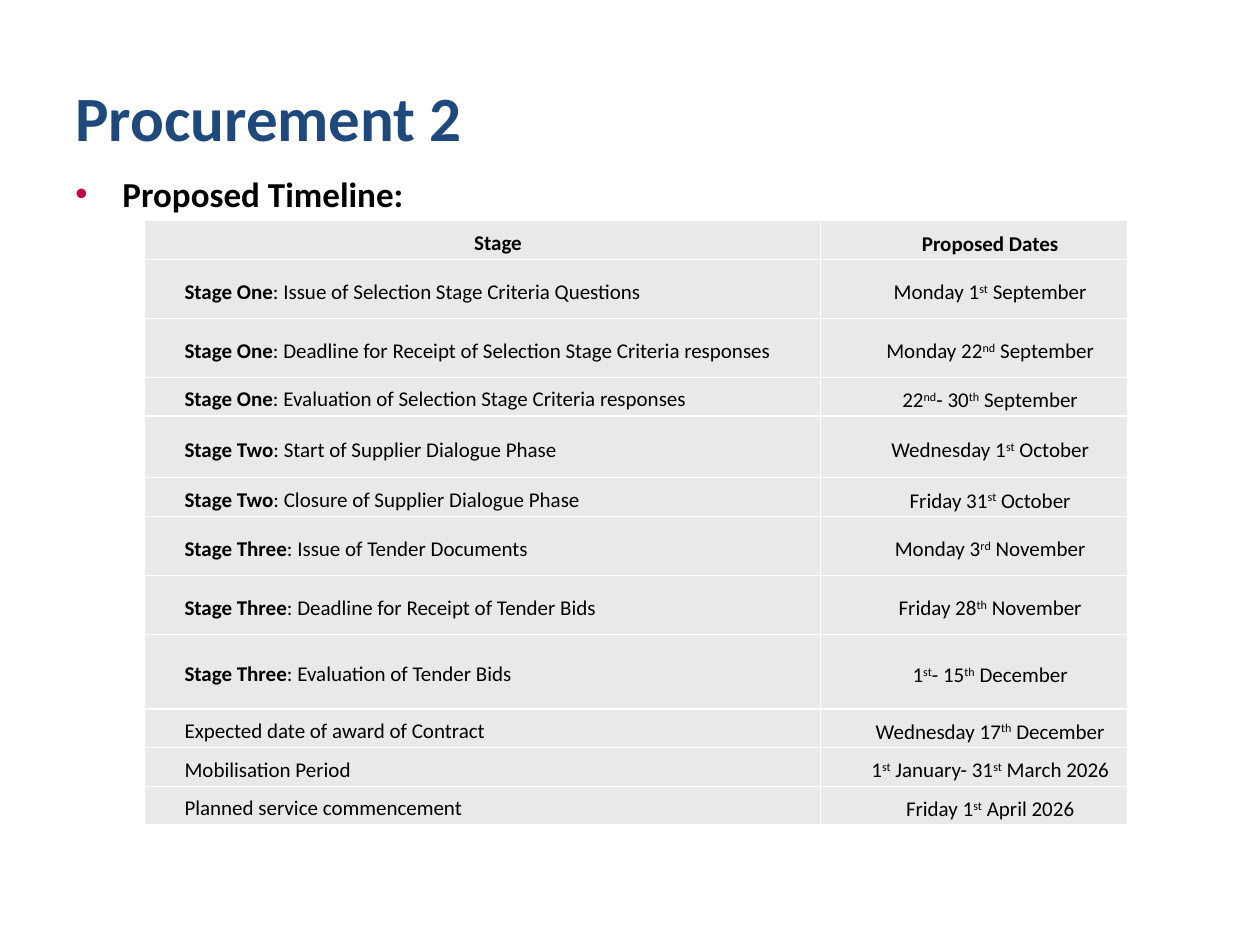
from lxml import etree
from pptx import Presentation
from pptx.dml.color import RGBColor
from pptx.enum.text import MSO_ANCHOR, PP_ALIGN
from pptx.oxml.ns import qn
from pptx.util import Cm, Pt

MIDDLE = MSO_ANCHOR.MIDDLE
CENTER, JUSTIFY = PP_ALIGN.CENTER, PP_ALIGN.JUSTIFY
NAVY = RGBColor(0x1F, 0x49, 0x7D)
CRIMSON = RGBColor(0xC5, 0x00, 0x46)
BLACK = RGBColor(0, 0, 0)
GREY = RGBColor(0xE9, 0xE9, 0xE9)
WHITE = RGBColor(0xFF, 0xFF, 0xFF)

SHORT, TALL = 0.78, 1.19
TIMELINE = [
    ("Stage", "", "Proposed Dates", SHORT),
    ("Stage One", ": Issue of Selection Stage Criteria Questions", "Monday 1^st^ September", TALL),
    ("Stage One", ": Deadline for Receipt of Selection Stage Criteria responses",
     "Monday 22^nd^ September", TALL),
    ("Stage One", ": Evaluation of Selection Stage Criteria responses", "22^nd^- 30^th^ September", SHORT),
    ("Stage Two", ": Start of Supplier Dialogue Phase", "Wednesday 1^st^ October", 1.24),
    ("Stage Two", ": Closure of Supplier Dialogue Phase", "Friday 31^st^ October", SHORT),
    ("Stage Three", ": Issue of Tender Documents", "Monday 3^rd^ November", TALL),
    ("Stage Three", ": Deadline for Receipt of Tender Bids", "Friday 28^th^ November", TALL),
    ("Stage Three", ": Evaluation of Tender Bids", "1^st^- 15^th^ December", 1.5),
    ("", "Expected date of award of Contract", "Wednesday 17^th^ December", SHORT),
    ("", "Mobilisation Period", "1^st^ January- 31^st^ March 2026", SHORT),
    ("", "Planned service commencement", "Friday 1^st^ April 2026", SHORT),
]


def style_font(paragraph, size, color, bold=None):
    font = paragraph.font
    font.name, font.size, font.bold = "Calibri", Pt(size), bold
    font.color.rgb = color


def format_cell(cell):
    cell.vertical_anchor = MIDDLE
    cell.margin_left = cell.margin_right = Cm(0.18)
    cell.margin_top = cell.margin_bottom = 0
    properties = cell._tc.get_or_add_tcPr()
    for side in ("lnL", "lnR", "lnT", "lnB"):
        border = etree.SubElement(properties, qn(f"a:{side}"), w=str(Pt(1)))
        paint = etree.SubElement(border, qn("a:solidFill"))
        etree.SubElement(paint, qn("a:srgbClr"), val=str(WHITE))
    cell.fill.solid()
    cell.fill.fore_color.rgb = GREY
    paragraph = cell.text_frame.paragraphs[0]
    indent = paragraph._p.get_or_add_pPr()
    indent.set("marL", str(Cm(0.64)))
    indent.set("indent", "0")
    return paragraph


prs = Presentation()
prs.slide_width, prs.slide_height = Cm(25.4), Cm(19.05)
slide = prs.slides.add_slide(prs.slide_layouts[6])

title = slide.shapes.add_textbox(Cm(1.27), Cm(0.76), Cm(22.86), Cm(3.18)).text_frame
title.word_wrap = True
title.vertical_anchor = MIDDLE
title.text = "Procurement 2"
style_font(title.paragraphs[0], 36, NAVY, True)

body = slide.shapes.add_textbox(Cm(1.27), Cm(3.35), Cm(22.86), Cm(13.03)).text_frame
body.word_wrap = True
body.text = "Proposed Timeline:"
heading = body.paragraphs[0]
bullet = heading._p.get_or_add_pPr()
bullet.set("marL", str(Cm(0.95)))
bullet.set("indent", str(-Cm(0.95)))
bullet_color = etree.SubElement(bullet, qn("a:buClr"))
etree.SubElement(bullet_color, qn("a:srgbClr"), val=str(CRIMSON))
etree.SubElement(bullet, qn("a:buFont"), typeface="Arial")
etree.SubElement(bullet, qn("a:buChar"), char="•")
style_font(heading, 20, BLACK, True)

table_height = Cm(sum(row[-1] for row in TIMELINE))
timeline = slide.shapes.add_table(
    len(TIMELINE), 2, Cm(2.9), Cm(4.45), Cm(19.84), table_height).table
timeline.first_row = timeline.horz_banding = False
timeline.columns[0].width = Cm(13.64)
timeline.columns[1].width = Cm(6.2)

for index, (label, detail, dates, height) in enumerate(TIMELINE):
    is_header = index == 0
    timeline.rows[index].height = Cm(height)

    stage = format_cell(timeline.cell(index, 0))
    stage.alignment = CENTER if is_header else JUSTIFY
    stage.line_spacing = Pt(18)
    style_font(stage, 12, BLACK)
    for text, bold in ((label, True), (detail, False)):
        if text:
            run = stage.add_run()
            run.text, run.font.bold = text, bold

    date = format_cell(timeline.cell(index, 1))
    date.alignment = CENTER
    date.line_spacing = 1.3
    date.space_after = Pt(12)
    style_font(date, 12, BLACK, is_header)
    for position, text in enumerate(dates.split("^")):
        run = date.add_run()
        run.text = text
        if position % 2:
            run.font._element.set("baseline", "30000")

prs.save("out.pptx")
